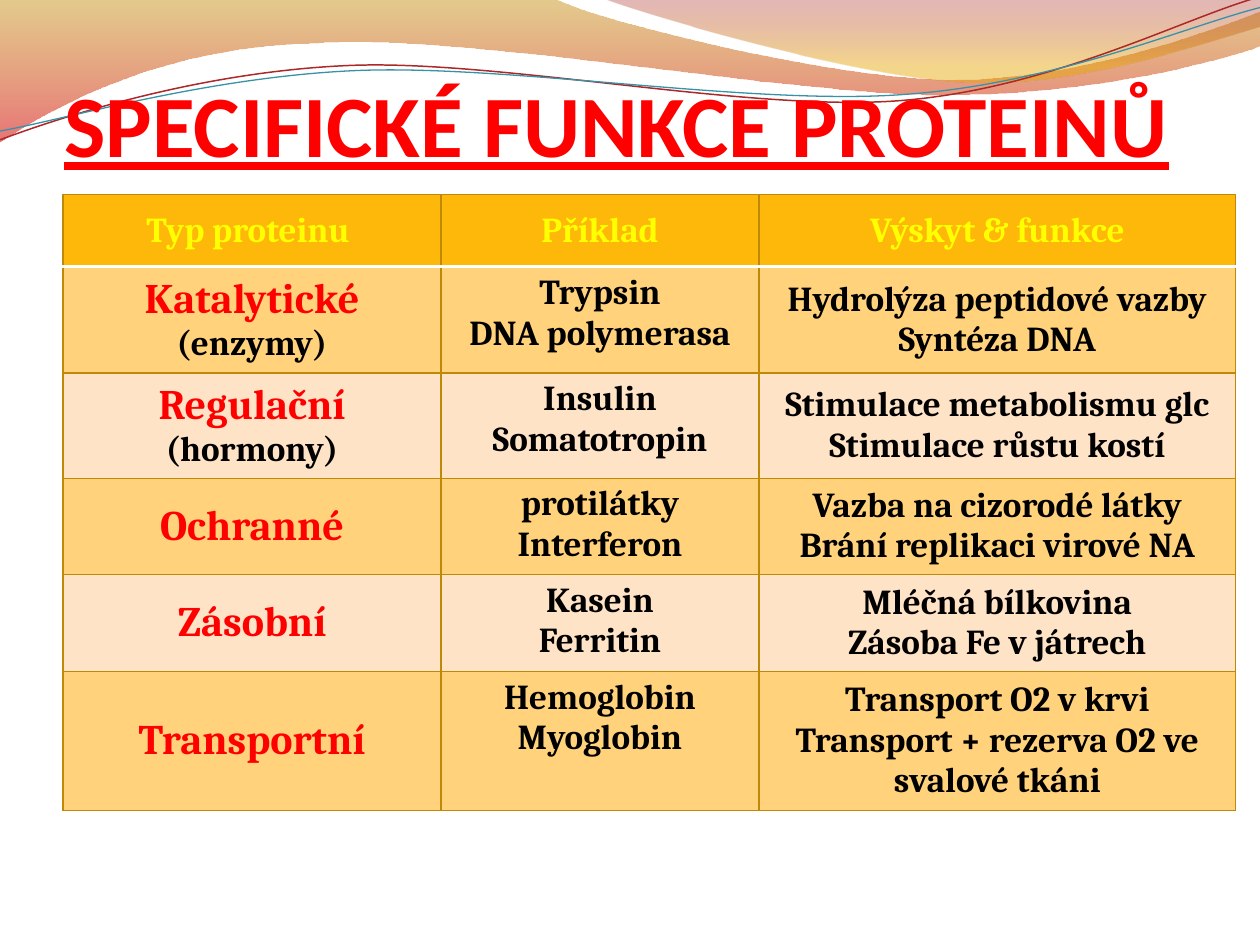
from math import cos, radians, sin
from pptx import Presentation
from pptx.util import Cm, Pt
from pptx.dml.color import RGBColor
from pptx.enum.text import MSO_ANCHOR as Anchor, PP_ALIGN as Align
from pptx.oxml.ns import qn
from lxml.etree import Element, SubElement as Sub

RED, BLACK, YELLOW, WHITE = "FF0000", "000000", "FFFF00", "FFFFFF"
GOLD, SAND, CREAM, EDGE = "FEB80A", "FFD27B", "FFE3C6", "BF8905"
TILT = 2.7


def color(code):
    return RGBColor.from_string(code)


def place(x, y, tilt):
    turn, dx, dy = radians(tilt), x - 4.99, y - 0.57
    return (Cm(2.54 * (4.99 + dx * cos(turn) - dy * sin(turn))),
            Cm(2.54 * (0.57 + dx * sin(turn) + dy * cos(turn))))


class Deck:
    def __init__(self):
        self.file = Presentation()
        self.file.slide_width, self.file.slide_height = Cm(25.4), Cm(19.05)
        self.slide = self.file.slides.add_slide(self.file.slide_layouts[6])
        self.head, self.body = "Calibri", "Cambria"

    def style(self, run, face, size, tone):
        font = run.font
        font.name, font.size, font.bold = face, Pt(size), True
        font.color.rgb = color(tone)

    def outline(self, start, parts, close, tilt=0):
        parts = [[place(x, y, tilt) for x, y in zip(part[::2], part[1::2])]
                 for part in parts]
        pen = self.slide.shapes.build_freeform(*place(*start, tilt))
        pen.add_line_segments([part[-1] for part in parts], close=close)
        shape = pen.convert_to_shape()
        shape.shadow.inherit = False
        nodes = list(shape._element.iter(qn("a:lnTo")))
        for node, part in zip(nodes, parts):
            if len(part) == 1:
                continue
            node.tag = qn("a:cubicBezTo")
            for index, (x, y) in enumerate(part[:-1]):
                point = Element(qn("a:pt"))
                point.set("x", str(int(x - shape.left)))
                point.set("y", str(int(y - shape.top)))
                node.insert(index, point)
        shape.rotation = -tilt % 360
        return shape

    def wave(self, start, parts, stops):
        shape = self.outline(start, parts, True)
        shape.line.fill.background()
        shape.fill.gradient()
        shape.fill.gradient_angle = 270
        for stop, (spot, tone, alpha) in zip(shape.fill.gradient_stops, stops):
            stop.position = spot
            stop.color.rgb = color(tone)
        for node, (_, _, alpha) in zip(shape._element.iter(qn("a:srgbClr")), stops):
            Sub(node, qn("a:alpha")).set("val", str(alpha * 1000))

    def curve(self, start, parts, tone, width):
        shape = self.outline(start, parts, False, TILT)
        shape.fill.background()
        shape.line.color.rgb = color(tone)
        shape.line.width = Pt(width)

    def title(self, text, left, top, width, height):
        frame = self.slide.shapes.add_textbox(
            Cm(left), Cm(top), Cm(width), Cm(height)).text_frame
        frame.word_wrap = True
        frame.vertical_anchor = Anchor.BOTTOM
        frame.margin_left = frame.margin_right = frame.margin_bottom = 0
        frame.text = text
        run = frame.paragraphs[0].runs[0]
        self.style(run, self.head, 50, RED)
        run.font.underline = True

    def border(self, cell, side, tone, width):
        line = Sub(cell._tc.get_or_add_tcPr(), qn("a:ln" + side))
        line.set("w", str(Pt(width)))
        Sub(Sub(line, qn("a:solidFill")), qn("a:srgbClr")).set("val", tone)

    def cell(self, cell, text, row, col):
        for side in "LRTB":
            rule = (row, side) in ((0, "B"), (1, "T"))
            self.border(cell, side, *((WHITE, 2) if rule else (EDGE, 0.75)))
        cell.fill.solid()
        cell.fill.fore_color.rgb = color(
            GOLD if row == 0 else SAND if row % 2 else CREAM)
        cell.vertical_anchor = Anchor.TOP if row and col == 1 else Anchor.MIDDLE
        cell.text_frame.text = text
        first = True
        for para in cell.text_frame.paragraphs:
            para.alignment = Align.CENTER
            for run in para.runs:
                label = row and col == 0 and first
                tone = YELLOW if row == 0 else RED if label else BLACK
                self.style(run, self.body, 24 if label else 20, tone)
                first = False

    def table(self, rows, left, top, widths, heights, total):
        frame = self.slide.shapes.add_table(
            len(rows), len(widths), Cm(left), Cm(top),
            Cm(sum(widths)), Cm(total))
        table = frame.table
        table.first_row, table.horz_banding = True, False
        for column, width in zip(table.columns, widths):
            column.width = Cm(width)
        for line, height in zip(table.rows, heights):
            line.height = Cm(height)
        frame.height = Cm(total)
        for row, texts in enumerate(rows):
            for col, text in enumerate(texts):
                self.cell(table.cell(row, col), text, row, col)


def main():
    deck = Deck()
    deck.wave((0, 0), [
        (4.4, -0.01), (4.76, 0.17, 6.64, 0.63, 7.58, 0.63),
        (8.53, 0.63, 9.58, 0.26, 10, 0.09), (10.01, 0.36),
        (9.83, 0.44, 8.7, 0.76, 7.46, 0.75),
        (6.22, 0.75, 3.82, 0.28, 2.57, 0.34),
        (1.29, 0.36, 0.46, 0.83, -0.01, 1.13),
    ], [(0, "C38B00", 45), (1, "D60305", 55)])
    deck.wave((4.79, -0.01), [
        (5.09, 0.11, 6.82, 0.62, 7.69, 0.65),
        (8.56, 0.69, 9.61, 0.32, 10, 0.21), (10, 0),
    ], [(0, "A11112", 30), (0.8, "E9A600", 45)])
    deck.curve((0, 1.11), [
        (0.48, 0.93, 1.58, 0.57, 2.77, 0.52),
        (3.95, 0.47, 5.93, 0.89, 7.13, 0.8),
        (8.33, 0.71, 9.38, 0.15, 9.98, -0.02),
    ], "AC2829", 0.85)
    deck.curve((0, 1.04), [
        (0.47, 0.96, 1.64, 0.61, 2.83, 0.56),
        (4.03, 0.51, 5.97, 0.84, 7.17, 0.75),
        (8.36, 0.67, 9.41, 0.21, 10, 0.06),
    ], "3891A7", 0.75)
    deck.title("SPECIFICKÉ FUNKCE PROTEINŮ", 1.3, 1.13, 23, 2.39)
    deck.table([
        ("Typ proteinu ", "Příklad", "Výskyt & funkce"),
        ("Katalytické\n(enzymy)", "Trypsin\nDNA polymerasa",
         "Hydrolýza peptidové vazby\nSyntéza DNA"),
        ("Regulační\v(hormony)", "Insulin\nSomatotropin",
         "Stimulace metabolismu glc\nStimulace růstu kostí"),
        ("Ochranné", "protilátky\nInterferon",
         "Vazba na cizorodé látky\nBrání replikaci virové NA"),
        ("Zásobní", "Kasein\nFerritin",
         "Mléčná bílkovina\nZásoba Fe v játrech"),
        ("Transportní", "Hemoglobin\nMyoglobin",
         "Transport O2 v krvi\nTransport + rezerva O2 ve\nsvalové tkáni"),
    ], 1.27, 3.92, (7.62, 6.41, 9.61), (1.46, 2.14, *[1.45] * 4), 12.4)
    deck.file.save("out.pptx")


if __name__ == "__main__":
    main()
